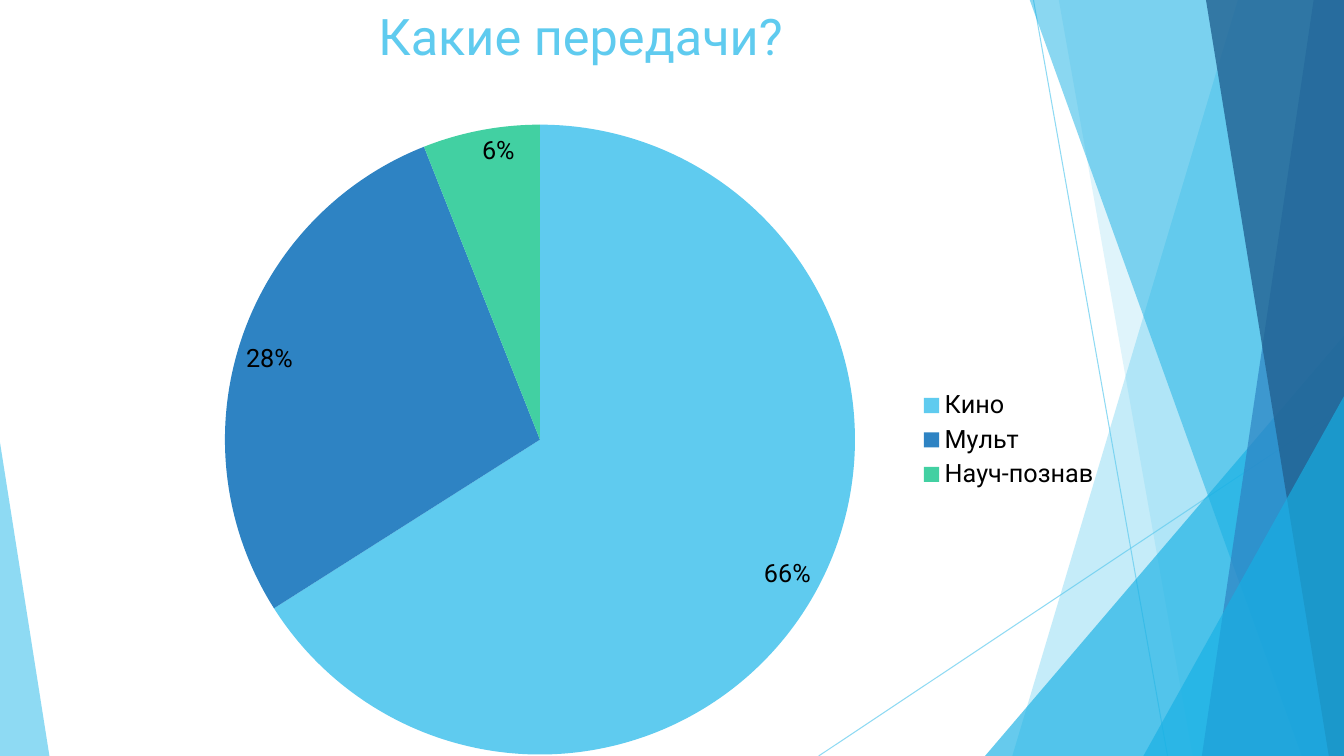
"""Build a slide with a pie chart of favourite programmes over a faceted background."""
from typing import NamedTuple

from lxml import etree
from pptx import Presentation
from pptx.chart.data import CategoryChartData
from pptx.dml.color import RGBColor
from pptx.enum.chart import XL_CHART_TYPE, XL_LABEL_POSITION, XL_LEGEND_POSITION
from pptx.enum.shapes import MSO_CONNECTOR, MSO_SHAPE
from pptx.enum.text import MSO_ANCHOR, PP_ALIGN
from pptx.oxml import parse_xml
from pptx.oxml.ns import nsdecls, qn
from pptx.util import Inches, Pt

PIE = XL_CHART_TYPE.PIE
INSIDE_END = XL_LABEL_POSITION.INSIDE_END
LEGEND_RIGHT = XL_LEGEND_POSITION.RIGHT
STRAIGHT = MSO_CONNECTOR.STRAIGHT
TRIANGLE = MSO_SHAPE.ISOSCELES_TRIANGLE
MIDDLE = MSO_ANCHOR.MIDDLE
CENTER = PP_ALIGN.CENTER

FONT = "Roboto"
SKY, CYAN, BLUE, NAVY, GREEN = "5FCBEF", "17B0E4", "2E83C3", "226292", "42D0A2"
BLACK = "000000"
RIGHT, TOP, BOTTOM = 13.33, -0.01, 7.5


class Ray(NamedTuple):
    """A thin line between two points."""
    x1: float
    y1: float
    x2: float
    y2: float


class Band(NamedTuple):
    """A facet reaching the right edge, with a slanted left side."""
    top_x: float
    bottom_x: float
    color: str
    alpha: int


class Wedge(NamedTuple):
    """A right triangle standing on the bottom edge."""
    left: float
    top: float
    width: float
    apex: float
    color: str
    alpha: int


class Programme(NamedTuple):
    """A slice of the pie."""
    label: str
    share: float
    color: str


RAYS = [Ray(10.25, 0, 11.58, BOTTOM), Ray(RIGHT, 4.03, 8.12, BOTTOM)]
FACETS = [
    Band(12.28, 10.04, SKY, 36),
    Band(10.5, 11.83, SKY, 20),
    Wedge(9.77, 3.33, 3.56, 1, CYAN, 66),
    Band(10.21, 12.91, CYAN, 50),
    Band(13.03, 11.92, BLUE, 70),
    Band(11.96, 13.18, NAVY, 80),
    Wedge(11.34, 3.93, 1.99, 1, CYAN, 66),
    Wedge(0, 4.39, 0.49, 0, SKY, 70),
]
PROGRAMMES = [
    Programme("Кино", 0.66, SKY),
    Programme("Мульт", 0.28, BLUE),
    Programme("Науч-познав", 0.06, GREEN),
]


def paint(color_owner, color: str, alpha: int = 100) -> None:
    """Give a fill a solid colour with an opacity in percent."""
    color_owner.solid()
    color_owner.fore_color.rgb = RGBColor.from_string(color)
    if alpha < 100:
        tint = color_owner.fore_color._xFill.find(qn("a:srgbClr"))
        etree.SubElement(tint, qn("a:alpha")).set("val", str(alpha * 1000))


def style_font(font, size: int, color: str) -> None:
    """Set the typeface, size and colour of a font."""
    font.name = FONT
    font.size = Pt(size)
    paint(font.fill, color)


def draw_ray(shapes, ray: Ray) -> None:
    """Draw one thin translucent line."""
    line = shapes.add_connector(STRAIGHT, *map(Inches, ray))
    line.line.width = Pt(0.75)
    paint(line.line.fill, SKY, 70)
    etree.SubElement(line._element.spPr, qn("a:effectLst"))


def draw_facet(shapes, facet: Band | Wedge) -> None:
    """Draw one translucent background facet."""
    if isinstance(facet, Band):
        corners = [(RIGHT, TOP), (RIGHT, BOTTOM), (facet.bottom_x, BOTTOM)]
        outline = shapes.build_freeform(Inches(facet.top_x), Inches(TOP))
        outline.add_line_segments([(Inches(x), Inches(y)) for x, y in corners])
        shape = outline.convert_to_shape()
    else:
        box = (facet.left, facet.top, facet.width, BOTTOM - facet.top)
        shape = shapes.add_shape(TRIANGLE, *map(Inches, box))
        shape.adjustments[0] = facet.apex
    paint(shape.fill, facet.color, facet.alpha)
    shape.line.fill.background()
    shape.shadow.inherit = False


def write_title(title) -> None:
    """Place and format the slide title."""
    title.left, title.top, title.width, title.height = map(Inches, (1.06, 0, 9.4, 0.71))
    frame = title.text_frame
    frame.text = "Какие передачи?"
    frame.vertical_anchor = MIDDLE
    heading = frame.paragraphs[0]
    heading.alignment = CENTER
    style_font(heading.font, 36, SKY)


def draw_pie(shapes) -> None:
    """Add the pie chart with its legend and percentage labels."""
    data = CategoryChartData(number_format="0%")
    data.categories = [programme.label for programme in PROGRAMMES]
    data.add_series("Series 1", [programme.share for programme in PROGRAMMES])
    box = map(Inches, (1.61, 1.1, 9.4, 6.53))
    chart = shapes.add_chart(PIE, *box, data).chart
    style_font(chart.font, 18, BLACK)
    chart.has_title = False
    chart.has_legend = True
    chart.legend.position = LEGEND_RIGHT
    chart.legend.include_in_layout = False

    plot = chart.plots[0]
    plot.vary_by_categories = True
    for index, programme in enumerate(PROGRAMMES):
        paint(plot.series[0].points[index].format.fill, programme.color)
    plot.has_data_labels = True
    labels = plot.data_labels
    labels.show_value = True
    labels.show_percentage = False
    labels.number_format = "0%"
    labels.number_format_is_linked = False
    labels.position = INSIDE_END
    style_font(labels.font, 18, BLACK)

    area = chart._chartSpace.chart.plotArea
    for layout in area.findall(qn("c:layout")):
        area.remove(layout)
    sizes = {"x": 0.066, "y": 0.021, "w": 0.665, "h": 0.957}
    entries = "".join(f'<c:{key} val="{value}"/>' for key, value in sizes.items())
    area.insert(0, parse_xml(
        f'<c:layout {nsdecls("c")}><c:manualLayout><c:layoutTarget val="inner"/>'
        f'<c:xMode val="edge"/><c:yMode val="edge"/>{entries}'
        "</c:manualLayout></c:layout>"))


def main() -> None:
    """Build and save the presentation."""
    deck = Presentation()
    deck.slide_width, deck.slide_height = Inches(RIGHT), Inches(BOTTOM)
    slide = deck.slides.add_slide(deck.slide_layouts[5])
    paint(slide.background.fill, "FFFFFF")
    shapes = slide.shapes
    title = shapes.title
    for ray in RAYS:
        draw_ray(shapes, ray)
    for facet in FACETS:
        draw_facet(shapes, facet)
    write_title(title)
    shapes._spTree.append(title._element)
    draw_pie(shapes)
    deck.save("out.pptx")


if __name__ == "__main__":
    main()
